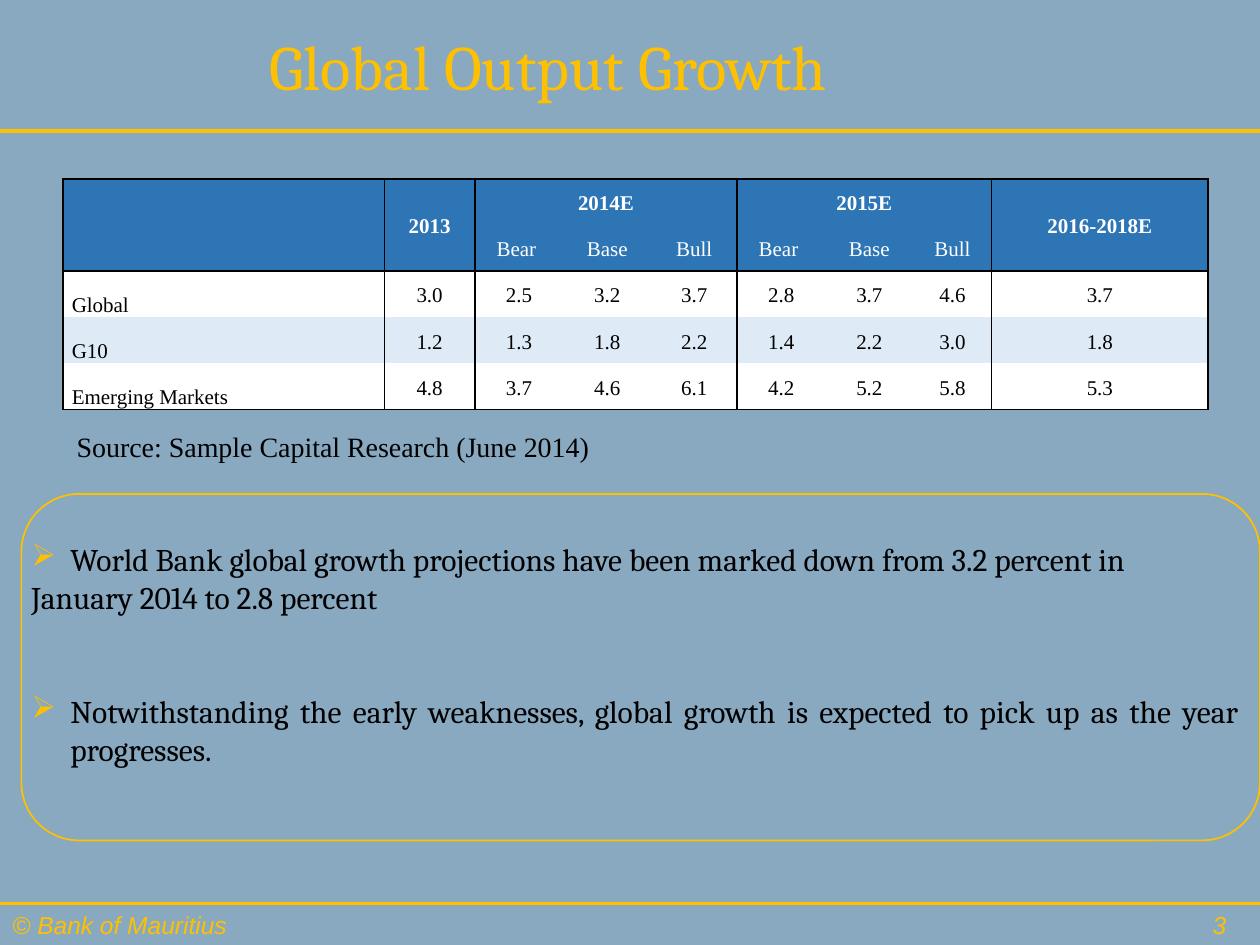
from typing import NamedTuple

from lxml import etree
from pptx import Presentation
from pptx import util as u
from pptx.dml.color import RGBColor
from pptx.enum import shapes, text
from pptx.oxml import ns

HUES = {"back": "89A9C1", "gold": "FFC000", "ink": "000000",
        "head": "2E75B6", "band": "DEEBF7", "white": "FFFFFF"}
ALIGN = text.PP_ALIGN
MID = text.MSO_ANCHOR.MIDDLE
SERIF = "Times New Roman"


class Label(NamedTuple):
    words: str
    box: tuple[float, float, float, float]
    face: str
    size: int
    hue: str
    align: ALIGN = ALIGN.LEFT
    anchor: text.MSO_ANCHOR = text.MSO_ANCHOR.TOP
    slant: bool = False
    wrap: bool = True


class Point(NamedTuple):
    words: str
    mark: bool
    gap: float


LABELS = [
    Label("Global Output Growth", (0.04, 0, 8.62, 1.04), "Cambria", 36, "gold",
          ALIGN.CENTER, MID),
    Label("© Bank of Mauritius", (0, 7.17, 3.58, 0.34), "Arial", 14, "gold", slant=True),
    Label("3", (7.58, 7.17, 2.25, 0.34), "Arial", 14, "gold", ALIGN.RIGHT, MID, True),
    Label("Source: Sample Capital Research (June 2014)", (0.51, 3.36, 4.39, 0.37),
          SERIF, 16, "ink", wrap=False),
]
POINTS = [
    Point("World Bank global growth projections have been marked down "
          "from 3.2 percent in", True, 0),
    Point("January 2014 to 2.8 percent", False, 0),
    Point("Notwithstanding the early weaknesses, global growth is expected "
          "to pick up as the year progresses.", True, 43.5),
]
ROWS = [
    ["", "2013", "2014E", "", "", "2015E", "", "", "2016-2018E"],
    ["", "", "Bear ", "Base", "Bull", "Bear ", "Base", "Bull", ""],
    ["Global", "3.0", "2.5", "3.2", "3.7", "2.8", "3.7", "4.6", "3.7"],
    ["G10", "1.2", "1.3", "1.8", "2.2", "1.4", "2.2", "3.0", "1.8"],
    ["Emerging Markets", "4.8", "3.7", "4.6", "6.1", "4.2", "5.2", "5.8", "5.3"],
]
WIDTHS = [2.55, 0.72, 0.7, 0.7, 0.68, 0.7, 0.7, 0.62, 1.72]
SPANS = [(0, 0, 1, 0), (0, 1, 1, 1), (0, 2, 0, 4), (0, 5, 0, 7), (0, 8, 1, 8)]
FILLS = ["head", "head", "white", "band", "white"]
STARTS, ENDS = (0, 1, 2, 5, 8), (0, 1, 4, 7, 8)


def tint(name: str) -> RGBColor:
    return RGBColor.from_string(HUES[name])


def style(para, face: str, size: int, hue: str, bold=False, slant=False) -> None:
    for run in para.runs:
        font = run.font
        font.name, font.size = face, u.Pt(size)
        font.bold, font.italic = bold, slant
        font.color.rgb = tint(hue)


def add_frame(slide, box: tuple, wrap: bool = True):
    frame = slide.shapes.add_textbox(*map(u.Inches, box)).text_frame
    frame.word_wrap = wrap
    return frame


def add_label(slide, item: Label) -> None:
    frame = add_frame(slide, item.box, item.wrap)
    frame.text = item.words
    frame.vertical_anchor = item.anchor
    para = frame.paragraphs[0]
    para.alignment = item.align
    style(para, item.face, item.size, item.hue, slant=item.slant)


def add_rule(slide, top: float) -> None:
    rule = slide.shapes.add_connector(
        shapes.MSO_CONNECTOR.STRAIGHT, 0, u.Inches(top), u.Inches(10), u.Inches(top))
    rule.line.color.rgb = tint("gold")
    rule.line.width = u.Pt(1.75)
    etree.SubElement(rule._element.spPr, ns.qn("a:effectLst"))


def add_edge(cell, side: str, shown: bool) -> None:
    edge = etree.SubElement(cell._tc.get_or_add_tcPr(), ns.qn(f"a:ln{side}"))
    edge.set("w", str(u.Pt(1)))
    if shown:
        fill = etree.SubElement(edge, ns.qn("a:solidFill"))
        etree.SubElement(fill, ns.qn("a:srgbClr")).set("val", HUES["ink"])
    else:
        etree.SubElement(edge, ns.qn("a:noFill"))


def fill_cell(cell, row: int, col: int) -> None:
    low, last = row, col
    if cell.is_merge_origin:
        low += cell.span_height - 1
        last += cell.span_width - 1
    cell.margin_left = cell.margin_right = u.Inches(0.07)
    cell.margin_top = cell.margin_bottom = 0
    stub = row > 1 and col == 0
    cell.vertical_anchor = text.MSO_ANCHOR.BOTTOM if stub else MID
    for side, shown in (("L", col in STARTS), ("R", last in ENDS),
                        ("T", row in (0, 2)), ("B", low in (1, 4))):
        add_edge(cell, side, shown)
    cell.fill.solid()
    cell.fill.fore_color.rgb = tint(FILLS[row])
    if ROWS[row][col]:
        cell.text_frame.text = ROWS[row][col]
        para = cell.text_frame.paragraphs[0]
        para.alignment = ALIGN.LEFT if stub else ALIGN.CENTER
        para.line_spacing = 1.15
        style(para, SERIF, 12, "white" if row < 2 else "ink", bold=row == 0)


def add_grid(slide) -> None:
    grid = slide.shapes.add_table(
        len(ROWS), len(WIDTHS), u.Inches(0.5), u.Inches(1.42),
        u.Inches(9.08), u.Inches(1.83)).table
    for col, width in zip(grid.columns, WIDTHS):
        col.width = u.Inches(width)
    for line in grid.rows:
        line.height = u.Inches(1.83 / len(ROWS))
    for top, left, low, right in SPANS:
        grid.cell(top, left).merge(grid.cell(low, right))
    for row in range(len(ROWS)):
        for col in range(len(WIDTHS)):
            fill_cell(grid.cell(row, col), row, col)


def add_mark(para) -> None:
    props = para._p.get_or_add_pPr()
    props.set("marL", str(u.Inches(0.31)))
    props.set("indent", str(u.Inches(-0.31)))
    hue = etree.SubElement(props, ns.qn("a:buClr"))
    etree.SubElement(hue, ns.qn("a:srgbClr")).set("val", HUES["gold"])
    etree.SubElement(props, ns.qn("a:buChar")).set("char", "➢")


def add_points(slide) -> None:
    frame = add_frame(slide, (0.15, 4.24, 9.78, 2.4))
    for spot, item in enumerate(POINTS):
        para = frame.add_paragraph() if spot else frame.paragraphs[0]
        para.text = item.words
        para.alignment = ALIGN.JUSTIFY
        if item.gap:
            para.space_before = u.Pt(item.gap)
        if item.mark:
            add_mark(para)
        style(para, "Cambria", 18, "ink")


def add_panel(slide) -> None:
    panel = slide.shapes.add_shape(
        shapes.MSO_SHAPE.ROUNDED_RECTANGLE,
        *map(u.Inches, (0.17, 3.92, 9.83, 2.75)))
    panel.shadow.inherit = False
    panel.fill.background()
    panel.line.color.rgb = tint("gold")
    panel.line.width = u.Pt(1)


def main() -> None:
    deck = Presentation()
    deck.slide_width, deck.slide_height = u.Inches(10), u.Inches(7.5)
    slide = deck.slides.add_slide(deck.slide_layouts[6])
    slide.background.fill.solid()
    slide.background.fill.fore_color.rgb = tint("back")
    for top in (1.04, 7.17):
        add_rule(slide, top)
    for item in LABELS:
        add_label(slide, item)
    add_grid(slide)
    add_points(slide)
    add_panel(slide)
    deck.save("out.pptx")


if __name__ == "__main__":
    main()
